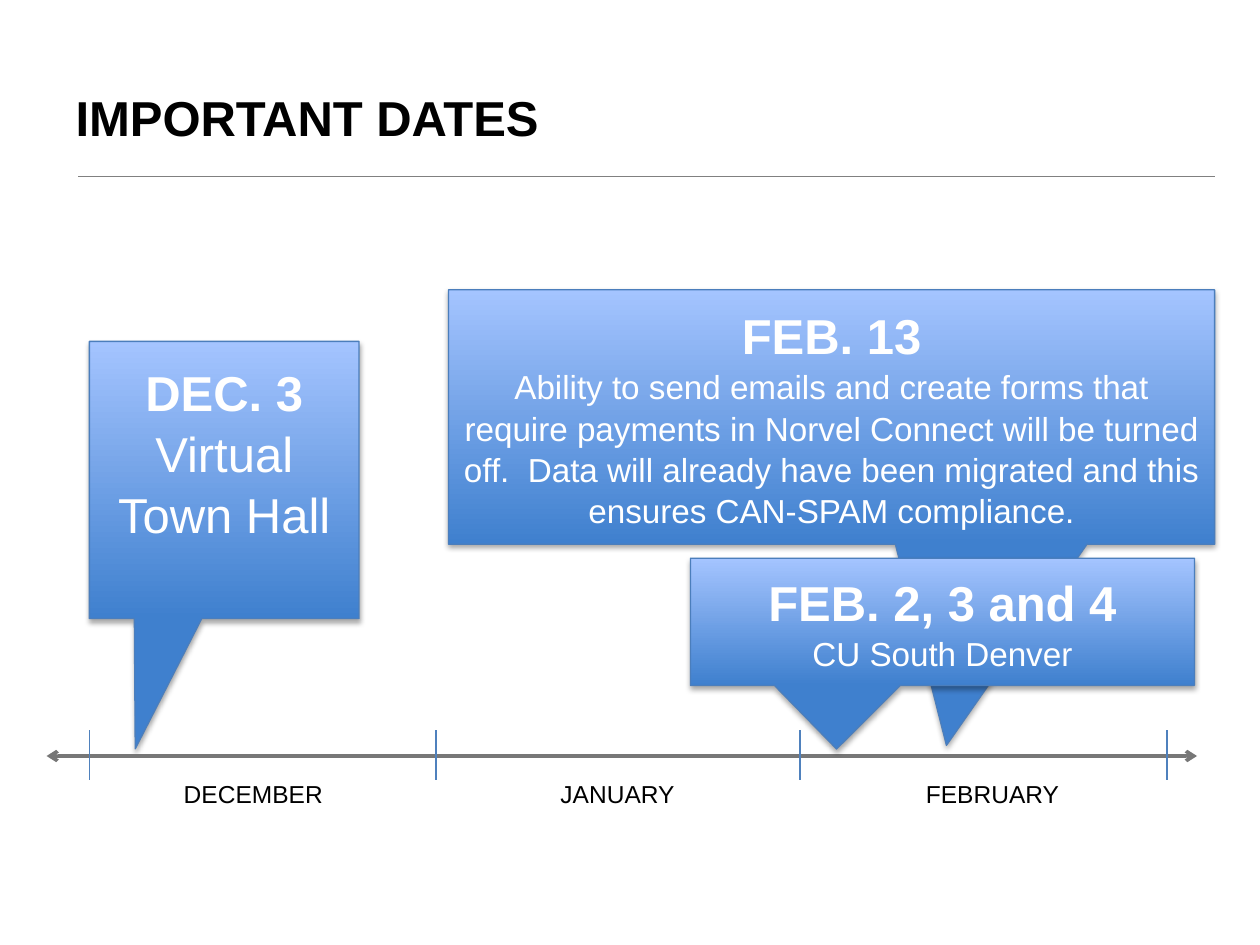
"""Build the timeline slide of important dates on a grid of 100 columns by 75 rows."""
from dataclasses import dataclass

from lxml.etree import SubElement
from pptx import Presentation
from pptx.dml.color import RGBColor
from pptx.enum.shapes import MSO_CONNECTOR as Connector, MSO_SHAPE as Preset
from pptx.enum.text import MSO_ANCHOR as Anchor, PP_ALIGN as Align
from pptx.oxml.ns import qn
from pptx.slide import Slide
from pptx.util import Emu, Inches, Pt

COLUMNS, ROWS = 100, 75
WIDTH, HEIGHT = Inches(10), Inches(7.5)
FONT = "Arial"
BLACK = RGBColor(0x00, 0x00, 0x00)
WHITE = RGBColor(0xFF, 0xFF, 0xFF)
RULE_GREY = RGBColor(0x80, 0x80, 0x80)
AXIS_GREY = RGBColor(0x77, 0x77, 0x77)
TICK_BLUE = RGBColor(0x4F, 0x81, 0xBD)
EDGE_BLUE = RGBColor(0x4B, 0x7E, 0xBC)
DEEP_BLUE = RGBColor(0x3F, 0x80, 0xCE)
PALE_BLUE = RGBColor(0xA4, 0xC4, 0xFF)
AXIS_ROW = 60
TICK_COLUMNS = (7.1, 34.6, 63.5, 92.6)


@dataclass(frozen=True)
class Box:
    """A rectangle in columns and rows."""

    column: float
    row: float
    columns: float
    rows: float

    def place(self) -> tuple[Emu, Emu, Emu, Emu]:
        """Return left, top, width and height."""
        return across(self.column), down(self.row), across(self.columns), down(self.rows)


@dataclass(frozen=True)
class Callout:
    """A dated event whose tip points to the timeline."""

    box: Box
    tip: tuple[float, float]
    date: str
    event: str
    event_size: float
    rows_below: float = 0.5


@dataclass(frozen=True)
class Month:
    """A month name under the timeline."""

    name: str
    box: Box


TITLE_BOX = Box(5, 3, 90, 12.5)
EARLY_CALLOUTS = (
    Callout(Box(7.1, 27.1, 21.4, 22), (-0.33, 0.97), "DEC. 3", "Virtual Town Hall", 28, 5),
    Callout(
        Box(35.6, 23, 60.8, 20.2), (0.15, 1.29), "FEB. 13",
        "Ability to send emails and create forms that require payments in Norvel Connect "
        "will be turned off.  Data will already have been migrated and this ensures "
        "CAN-SPAM compliance.", 19,
    ),
)
FRONT_CALLOUT = Callout(
    Box(54.8, 44.3, 40, 10.1), (-0.21, 1), "FEB. 2, 3 and 4", "CU South Denver", 19
)
MONTHS = (
    Month("DECEMBER", Box(13.6, 61.3, 13.9, 3.4)),
    Month("JANUARY", Box(43.5, 61.3, 11.6, 3.4)),
    Month("FEBRUARY", Box(72.5, 61.3, 12.9, 3.4)),
)


def across(columns: float) -> Emu:
    """Turn columns into a length."""
    return Emu(round(WIDTH * columns / COLUMNS))


def down(rows: float) -> Emu:
    """Turn rows into a length."""
    return Emu(round(HEIGHT * rows / ROWS))


def add_run(paragraph, text: str, size: float, color: RGBColor, bold: bool = False) -> None:
    """Add one formatted run to a paragraph."""
    run = paragraph.add_run()
    run.text = text
    run.font.name = FONT
    run.font.size = Pt(size)
    run.font.bold = bold
    run.font.color.rgb = color


def add_line(slide: Slide, start: tuple[float, float], end: tuple[float, float],
             color: RGBColor, weight: float, arrows: bool = False) -> None:
    """Draw a straight line between two grid points."""
    connector = slide.shapes.add_connector(
        Connector.STRAIGHT, across(start[0]), down(start[1]), across(end[0]), down(end[1])
    )
    connector.line.color.rgb = color
    connector.line.width = Pt(weight)
    if arrows:
        line = connector.line._get_or_add_ln()
        for end_name in ("a:headEnd", "a:tailEnd"):
            SubElement(line, qn(end_name), type="arrow")
    SubElement(connector._element.spPr, qn("a:effectLst"))


def add_soft_shadow(shape) -> None:
    """Give a shape a soft shadow straight below it."""
    shape.shadow.inherit = False
    effects = shape._element.spPr.find(qn("a:effectLst"))
    shadow = SubElement(effects, qn("a:outerShdw"), blurRad=str(Pt(3.1)), dist=str(Pt(1.8)),
                        dir="5400000", rotWithShape="0")
    color = SubElement(shadow, qn("a:srgbClr"), val="000000")
    SubElement(color, qn("a:alpha"), val="35000")


def add_callout(slide: Slide, callout: Callout) -> None:
    """Draw a callout with its date and event."""
    shape = slide.shapes.add_shape(Preset.RECTANGULAR_CALLOUT, *callout.box.place())
    for index, offset in enumerate(callout.tip):
        shape.adjustments[index] = offset
    shape.fill.gradient()
    shape.fill.gradient_angle = 90
    for stop, color in zip(shape.fill.gradient_stops, (DEEP_BLUE, PALE_BLUE)):
        stop.color.rgb = color
    shape.line.color.rgb = EDGE_BLUE
    shape.line.width = Pt(0.75)
    add_soft_shadow(shape)
    frame = shape.text_frame
    frame.word_wrap = True
    frame.vertical_anchor = Anchor.MIDDLE
    frame.margin_bottom = down(callout.rows_below)
    add_run(frame.paragraphs[0], callout.date, 28, WHITE, bold=True)
    add_run(frame.add_paragraph(), callout.event, callout.event_size, WHITE)
    for paragraph in frame.paragraphs:
        paragraph.alignment = Align.CENTER
        paragraph.line_spacing = 1.04


def add_month(slide: Slide, month: Month) -> None:
    """Write a month name under the timeline."""
    label = slide.shapes.add_textbox(*month.box.place())
    label.text_frame.word_wrap = True
    add_run(label.text_frame.paragraphs[0], month.name, 14, BLACK)


def add_title(slide: Slide, text: str) -> None:
    """Fill the title placeholder and draw the rule under it."""
    title = slide.shapes.title
    title.left, title.top, title.width, title.height = TITLE_BOX.place()
    title.text_frame.vertical_anchor = Anchor.MIDDLE
    paragraph = title.text_frame.paragraphs[0]
    paragraph.alignment = Align.LEFT
    add_run(paragraph, text, 28, BLACK, bold=True)
    add_line(slide, (6.2, 14), (96.4, 14), RULE_GREY, 0.75)


def main() -> None:
    """Build and save the presentation."""
    presentation = Presentation()
    presentation.slide_width, presentation.slide_height = WIDTH, HEIGHT
    slide = presentation.slides.add_slide(presentation.slide_layouts[5])
    add_title(slide, "IMPORTANT DATES")
    for callout in EARLY_CALLOUTS:
        add_callout(slide, callout)
    add_line(slide, (3.7, AXIS_ROW), (95, AXIS_ROW), AXIS_GREY, 2, arrows=True)
    for column in TICK_COLUMNS:
        add_line(slide, (column, AXIS_ROW + 1.9), (column, AXIS_ROW - 2.1), TICK_BLUE, 1)
    for month in MONTHS:
        add_month(slide, month)
    add_callout(slide, FRONT_CALLOUT)
    presentation.save("out.pptx")


if __name__ == "__main__":
    main()
